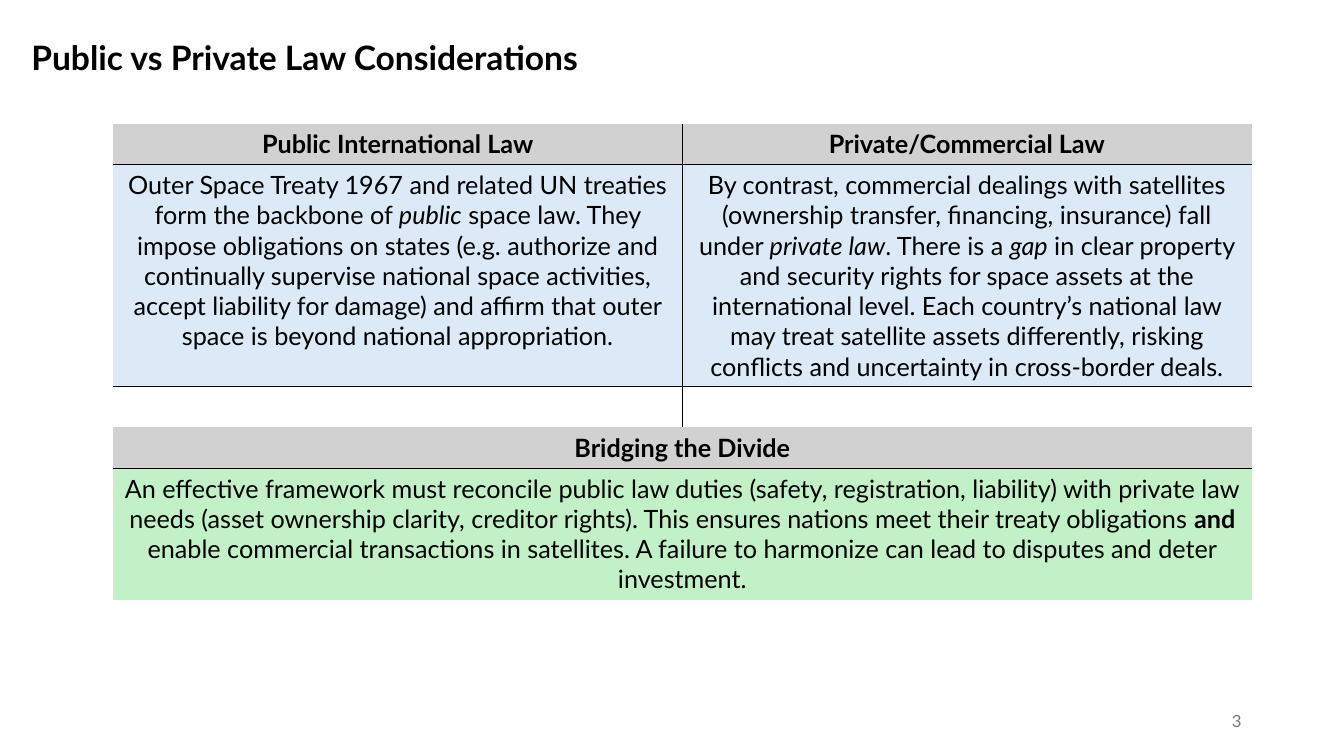
"""Build a slide that sets public law against private law in a table."""
from lxml.etree import SubElement
from pptx import Presentation
from pptx.dml.color import RGBColor as RGB
from pptx.enum.text import MSO_ANCHOR as Anchor, PP_ALIGN as Align
from pptx.oxml.ns import qn
from pptx.util import Cm, Pt

FONT, BLACK, GREY = "Lato", "000000", "797979"
HEAD, BLUE, GREEN = "D1D1D1", "DCEAF7", "C2F1C8"
TITLE = "Public vs Private Law Considerations"
PAGE = "3"

PUBLIC = [
    ("Outer Space Treaty 1967 and related UN treaties form the backbone of ", ""),
    ("public", "i"),
    (" space law. They impose obligations on states (e.g. authorize and "
     "continually supervise national space activities, accept liability for "
     "damage) and affirm that outer space is beyond national appropriation.", ""),
]
PRIVATE = [
    ("By contrast, commercial dealings with satellites (ownership transfer, "
     "financing, insurance) fall under ", ""),
    ("private law", "i"),
    (". There is a ", ""),
    ("gap", "i"),
    (" in clear property and security rights for space assets at the "
     "international level. Each country’s national law may treat satellite "
     "assets differently, risking conflicts and uncertainty in cross-border "
     "deals.", ""),
]
BRIDGE = [
    ("An effective framework must reconcile public law duties (safety, "
     "registration, liability) with private law needs (asset ownership clarity, "
     "creditor rights). This ensures nations meet their treaty obligations ", ""),
    ("and", "b"),
    (" enable commercial transactions in satellites. A failure to harmonize can "
     "lead to disputes and deter investment.", ""),
]
ROWS = [
    (1.03, HEAD, [[("Public International Law", "b")],
                  [("Private/Commercial Law", "b")]]),
    (5.59, BLUE, [PUBLIC, PRIVATE]),
    (1.03, None, [[], []]),
    (1.03, HEAD, [[("Bridging the Divide", "b")]]),
    (3.31, GREEN, [BRIDGE]),
]
RULED = {1, 2, 4}
LEFT, TOP, WIDTH = 2.85, 3.12, 28.69


def color(code):
    return RGB.from_string(code)


def write(para, runs, size, align, ink=BLACK):
    para.alignment = align
    for text, style in runs:
        run = para.add_run()
        run.text = text
        font = run.font
        font.name, font.size = FONT, Pt(size)
        font.bold, font.italic = style == "b", style == "i"
        font.color.rgb = color(ink)


def label(slide, box, runs, size, align, anchor, ink=BLACK):
    frame = slide.shapes.add_textbox(*map(Cm, box)).text_frame
    frame.word_wrap = True
    frame.vertical_anchor = anchor
    write(frame.paragraphs[0], runs, size, align, ink)


def edge(cell, side, shown):
    props = cell._tc.get_or_add_tcPr()
    line = SubElement(props, qn("a:ln" + side), w=str(Pt(1)))
    if shown:
        fill = SubElement(line, qn("a:solidFill"))
        SubElement(fill, qn("a:srgbClr"), val=BLACK)
    else:
        SubElement(line, qn("a:noFill"))


def grid(slide):
    tall = sum(row[0] for row in ROWS)
    table = slide.shapes.add_table(
        len(ROWS), 2, Cm(LEFT), Cm(TOP), Cm(WIDTH), Cm(tall)).table
    table.first_row = table.horz_banding = False
    for r, (high, tint, texts) in enumerate(ROWS):
        table.rows[r].height = Cm(high)
        split = len(texts) == 2
        if not split:
            table.cell(r, 0).merge(table.cell(r, 1))
        for c in range(2):
            cell = table.cell(r, c)
            edge(cell, "L", split and c == 1)
            edge(cell, "R", split and c == 0)
            edge(cell, "T", r in RULED)
            edge(cell, "B", r + 1 in RULED)
            if tint:
                cell.fill.solid()
                cell.fill.fore_color.rgb = color(tint)
            else:
                cell.fill.background()
            if c < len(texts):
                write(cell.text_frame.paragraphs[0], texts[c], 18, Align.CENTER)


def main():
    deck = Presentation()
    deck.slide_width, deck.slide_height = Cm(33.87), Cm(19.05)
    slide = deck.slides.add_slide(deck.slide_layouts[6])
    label(slide, (0.54, 0.8, 25.33, 1.28), [(TITLE, "b")], 24,
          Align.LEFT, Anchor.TOP)
    label(slide, (23.92, 17.66, 7.62, 1.01), [(PAGE, "")], 12,
          Align.RIGHT, Anchor.MIDDLE, GREY)
    grid(slide)
    deck.save("out.pptx")


if __name__ == "__main__":
    main()
